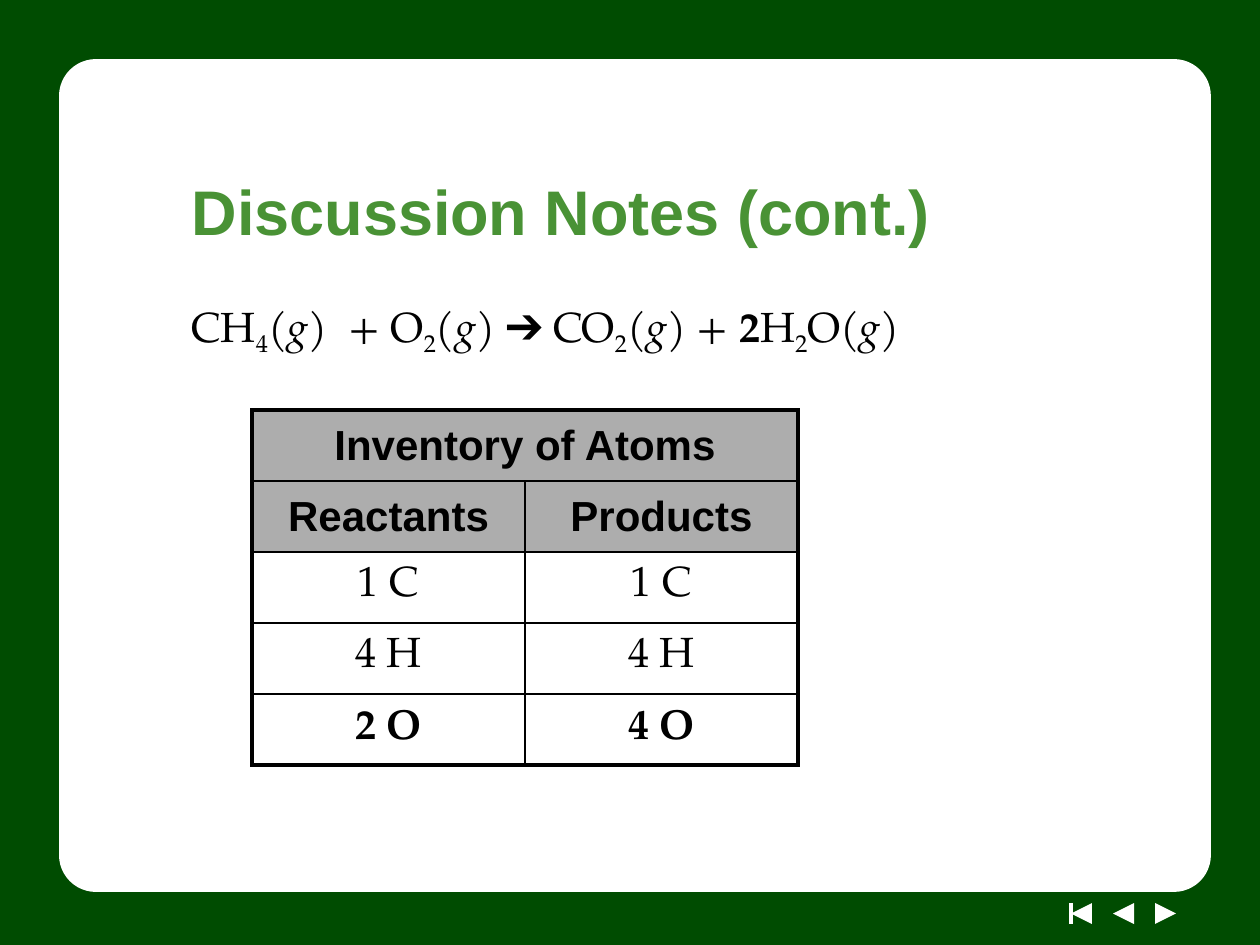
"""Build the chemistry discussion slide with a balanced-atom inventory table."""
from lxml import etree
from pptx import Presentation
from pptx import util as u
from pptx.dml.color import RGBColor
from pptx.enum import shapes, text
from pptx.oxml import ns

SANS, SERIF = "Arial", "TeX Gyre Pagella"
GREEN, WHITE, BLACK, GREY = "004C01", "FFFFFF", "000000", "ADADAD"
TITLE = "Discussion Notes (cont.)"
EQUATION = [
    ("CH", ""), ("4", "sub"), ("(", ""), ("g", "italic"), (")  + O", ""),
    ("2", "sub"), ("(", ""), ("g", "italic"), (") ➔ CO", ""),
    ("2", "sub"), ("(", ""), ("g", "italic"), (") + ", ""),
    ("2", "bold"), ("H", ""), ("2", "sub"), ("O(", ""), ("g", "italic"), (")", ""),
]
INVENTORY = [
    ("Inventory of Atoms", ""), ("Reactants", "Products"),
    ("1 C", "1 C"), ("4 H", "4 H"), ("2 O", "4 O"),
]
HEADER_ROWS = 2
NAV_TOP, NAV_SIZE = 903, 21
NAV_ARROWS = [(1155, 90), (1113, 270), (1071, 270)]
COLUMN_WIDTH, ROW_HEIGHT = 273, 71


def px(*lengths):
    return [u.Emu(round(length * 914400 / 126)) for length in lengths]


def colour(value):
    return RGBColor.from_string(value)


def add_shape(page, kind, box, fill):
    shape = page.shapes.add_shape(kind, *px(*box))
    shape.shadow.inherit = False
    shape.fill.solid()
    shape.fill.fore_color.rgb = colour(fill)
    shape.line.fill.background()
    return shape


def add_span(para, words, font, size=24, fill=BLACK, style=""):
    span = para.add_run()
    span.text = words
    span.font.name, span.font.size = font, u.Pt(size)
    span.font.color.rgb = colour(fill)
    span.font.bold, span.font.italic = style == "bold", style == "italic"
    if style == "sub":
        span.font._element.set("baseline", "-25000")


def place(page, holder, box, anchor):
    holder.left, holder.top, holder.width, holder.height = px(*box)
    holder.text_frame.vertical_anchor = anchor
    page.shapes._spTree.append(holder._element)
    para = holder.text_frame.paragraphs[0]
    para.alignment = text.PP_ALIGN.LEFT
    return para


def add_frame(page):
    add_shape(page, shapes.MSO_SHAPE.RECTANGLE, (0, 0, 1260, 945), GREEN)
    for left, angle in NAV_ARROWS:
        box = (left, NAV_TOP, NAV_SIZE, NAV_SIZE)
        add_shape(page, shapes.MSO_SHAPE.ISOSCELES_TRIANGLE, box, WHITE).rotation = angle
    left = NAV_ARROWS[-1][0]
    bar = page.shapes.add_connector(
        shapes.MSO_CONNECTOR.STRAIGHT, *px(left, NAV_TOP, left, NAV_TOP + NAV_SIZE))
    bar.line.color.rgb, bar.line.width = colour(WHITE), u.Pt(2)
    etree.SubElement(bar._element.spPr, ns.qn("a:effectLst"))
    panel = add_shape(page, shapes.MSO_SHAPE.ROUNDED_RECTANGLE, (63, 63, 1144, 825), WHITE)
    panel.adjustments[0] = 0.04
    panel.line.color.rgb, panel.line.width = colour(WHITE), u.Pt(4.5)


def set_borders(cell, outer):
    props = cell._tc.get_or_add_tcPr()
    for index, side in enumerate("LRTB"):
        width = u.Pt(2.25 if side in outer else 1)
        line = etree.Element(ns.qn("a:ln" + side), w=str(width))
        fill = etree.SubElement(line, ns.qn("a:solidFill"))
        etree.SubElement(fill, ns.qn("a:srgbClr"), val=BLACK)
        props.insert(index, line)


def add_inventory(page):
    rows, columns = len(INVENTORY), len(INVENTORY[0])
    box = (252, 410, columns * COLUMN_WIDTH, rows * ROW_HEIGHT)
    table = page.shapes.add_table(rows, columns, *px(*box)).table
    table.first_row = table.horz_banding = False
    for row, words in enumerate(INVENTORY):
        header, last = row < HEADER_ROWS, row == rows - 1
        for column, label in enumerate(words):
            cell = table.cell(row, column)
            cell.vertical_anchor = text.MSO_ANCHOR.MIDDLE
            if header:
                cell.fill.solid()
                cell.fill.fore_color.rgb = colour(GREY)
            else:
                cell.fill.background()
            outer = ("T" if row == 0 else "") + ("B" if last else "")
            outer += "L" if column == 0 or row == 0 else ""
            outer += "R" if column == columns - 1 or row == 0 else ""
            set_borders(cell, outer)
            if label:
                para = cell.text_frame.paragraphs[0]
                para.alignment, para.space_before = text.PP_ALIGN.CENTER, u.Pt(4.8)
                add_span(para, label, SANS if header else SERIF,
                         style="bold" if header or last else "")
    table.cell(0, 0).merge(table.cell(0, columns - 1))


def main():
    deck = Presentation()
    deck.slide_width, deck.slide_height = px(1260, 945)
    page = deck.slides.add_slide(deck.slide_layouts[1])
    title, body = page.placeholders
    add_frame(page)
    para = place(page, title, (179, 147, 1018, 126), text.MSO_ANCHOR.MIDDLE)
    add_span(para, TITLE, SANS, 36, "499235", "bold")
    para = place(page, body, (179, 294, 987, 504), text.MSO_ANCHOR.TOP)
    para.space_before = u.Pt(4.8)
    props = para._p.get_or_add_pPr()
    props.set("marL", "0")
    props.set("indent", "0")
    etree.SubElement(props, ns.qn("a:buNone"))
    for words, style in EQUATION:
        add_span(para, words, SERIF, style=style)
    add_inventory(page)
    deck.save("out.pptx")


if __name__ == "__main__":
    main()
